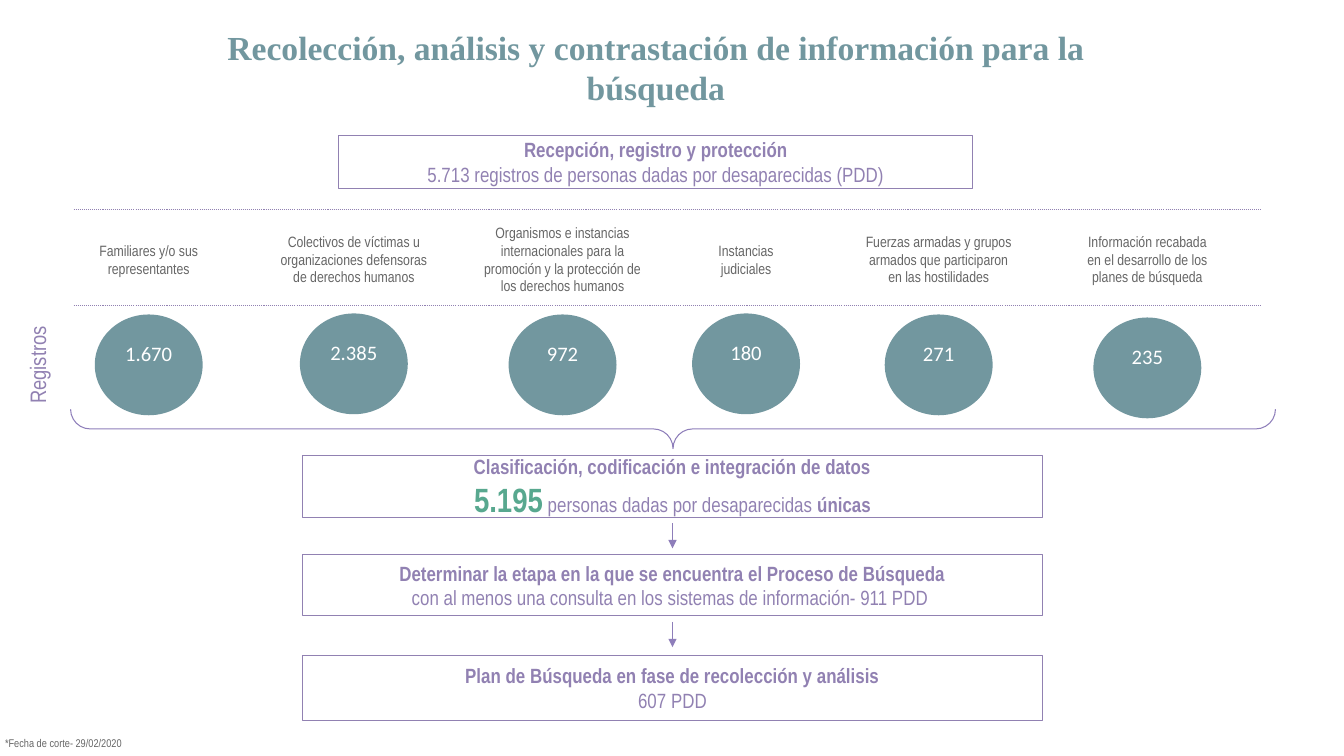
from lxml.etree import SubElement
from pptx import Presentation
from pptx.dml.color import RGBColor
from pptx.enum.dml import MSO_LINE
from pptx.enum.shapes import MSO_CONNECTOR, MSO_SHAPE
from pptx.enum.text import MSO_ANCHOR, PP_ALIGN
from pptx.oxml.ns import qn
from pptx.util import Inches, Pt

TEAL = RGBColor(0x72, 0x97, 0x9F)
PURPLE = RGBColor(0x91, 0x81, 0xB2)
VIOLET = RGBColor(0x8E, 0x7E, 0xBA)
GREEN = RGBColor(0x58, 0xA8, 0x8F)
GRAY = RGBColor(0x66, 0x66, 0x66)
WHITE = RGBColor(0xFF, 0xFF, 0xFF)
NARROW = "Arial Narrow"
STEP_SIZE = 14.7

SOURCES = [
    ("Familiares y/o sus representantes", "1.670", 1.475, 1.45, 3.12),
    ("Colectivos de víctimas u organizaciones defensoras de derechos humanos",
     "2.385", 3.51, 1.88, 3.11),
    ("Organismos e instancias internacionales para la promoción y la protección "
     "de los derechos humanos", "972", 5.58, 1.97, 3.12),
    ("Instancias judiciales", "180", 7.4, 1.24, 3.11),
    ("Fuerzas armadas y grupos armados que participaron en las hostilidades",
     "271", 9.31, 1.78, 3.12),
    ("Información recabada en el desarrollo de los planes de búsqueda",
     "235", 11.38, 1.52, 3.15),
]

STEPS = [
    ((3.36, 1.34, 6.29, 0.53), "Recepción, registro y protección",
     [("5.713 registros de personas dadas por desaparecidas (PDD)", STEP_SIZE, PURPLE, False)]),
    ((3, 4.52, 7.34, 0.61), "Clasificación, codificación e integración de datos",
     [("5.195", 24, GREEN, True), (" ", STEP_SIZE, PURPLE, True),
      ("personas dadas por desaparecidas", STEP_SIZE, PURPLE, False),
      (" únicas", STEP_SIZE, PURPLE, True)]),
    ((3, 5.5, 7.34, 0.61), "Determinar la etapa en la que se encuentra el Proceso de Búsqueda",
     [("con al menos una consulta en los sistemas de información- 911 PDD ",
       STEP_SIZE, PURPLE, False)]),
    ((3, 6.5, 7.34, 0.65), "Plan de Búsqueda en fase de recolección y análisis",
     [("607 PDD", STEP_SIZE, PURPLE, False)]),
]


def style_font(font, size, color, name=NARROW, bold=False):
    """Apply size, colour, typeface and weight to a font."""
    font.size, font.name, font.bold = Pt(size), name, bold
    font.color.rgb = color


def set_frame(shape, inset=0.07, bottom=None, anchor=MSO_ANCHOR.MIDDLE):
    """Wrap the text of a shape and set its margins and anchor."""
    frame = shape.text_frame
    frame.word_wrap = True
    frame.vertical_anchor = anchor
    frame.margin_left = frame.margin_right = Inches(0.13)
    frame.margin_top = Inches(inset)
    frame.margin_bottom = Inches(inset if bottom is None else bottom)
    return frame


def add_outline(slide, kind, box, fill=None, line=None):
    """Add a preset shape with an optional fill and thin outline."""
    shape = slide.shapes.add_shape(kind, *map(Inches, box))
    shape.shadow.inherit = False
    if fill is None:
        shape.fill.background()
    else:
        shape.fill.solid()
        shape.fill.fore_color.rgb = fill
    if line is None:
        shape.line.fill.background()
    else:
        shape.line.color.rgb = line
        shape.line.width = Pt(0.75)
    return shape


def add_rule(slide, start, end, color, dotted=False, arrow=False):
    """Draw a thin line, dotted or ending in an arrowhead."""
    rule = slide.shapes.add_connector(MSO_CONNECTOR.STRAIGHT, *map(Inches, start + end))
    rule.line.color.rgb = color
    rule.line.width = Pt(0.75)
    if dotted:
        rule.line.dash_style = MSO_LINE.ROUND_DOT
    if arrow:
        SubElement(rule.line._get_or_add_ln(), qn("a:tailEnd"), type="triangle")
    SubElement(rule._element.spPr, qn("a:effectLst"))


def add_label(slide, box, text, size, color, align=PP_ALIGN.LEFT, **frame_options):
    """Add a one-paragraph text box."""
    label = slide.shapes.add_textbox(*map(Inches, box))
    paragraph = set_frame(label, **frame_options).paragraphs[0]
    paragraph.text = text
    paragraph.alignment = align
    style_font(paragraph.runs[0].font, size, color)
    return label


def add_title(slide, box):
    """Add the slide heading."""
    heading = add_outline(slide, MSO_SHAPE.RECTANGLE, box, fill=WHITE)
    paragraph = set_frame(heading).paragraphs[0]
    paragraph.text = "Recolección, análisis y contrastación de información para la búsqueda"
    paragraph.alignment = PP_ALIGN.CENTER
    paragraph.space_before = paragraph.space_after = Pt(16)
    style_font(paragraph.runs[0].font, 24, TEAL, "Times New Roman", True)


def add_step(slide, box, heading, detail):
    """Add an outlined step with a bold heading above its detail."""
    step = add_outline(slide, MSO_SHAPE.RECTANGLE, box, line=PURPLE)
    frame = set_frame(step, inset=0.13)
    for runs in ([(heading, STEP_SIZE, PURPLE, True)], detail):
        paragraph = frame.add_paragraph() if frame.text else frame.paragraphs[0]
        paragraph.alignment = PP_ALIGN.CENTER
        for text, size, color, bold in runs:
            run = paragraph.add_run()
            run.text = text
            style_font(run.font, size, color, bold=bold)


def add_source(slide, name, count, center, width, circle_top):
    """Add one source of records: its name above a circled count."""
    add_label(slide, (center - width / 2, 2.16, width, 0.82), name, 10.7, GRAY, PP_ALIGN.CENTER)
    circle = add_outline(slide, MSO_SHAPE.OVAL, (center - 0.535, circle_top, 1.07, 1), fill=TEAL)
    paragraph = set_frame(circle, bottom=0.3).paragraphs[0]
    paragraph.text = count
    paragraph.alignment = PP_ALIGN.CENTER
    style_font(paragraph.runs[0].font, STEP_SIZE, WHITE, "Calibri")


def add_records(slide, left, top, width):
    """Add the band of sources with its rules, side label and brace."""
    for offset in (0, 0.95):
        add_rule(slide, (left, top + offset), (left + width, top + offset), PURPLE, dotted=True)
    for source in SOURCES:
        add_source(slide, *source)
    side = add_label(slide, (left - 0.89, top + 1.33, 1.05, 0.4), "Registros", 16, PURPLE,
                     anchor=MSO_ANCHOR.TOP)
    side.rotation = 270
    brace = add_outline(slide, MSO_SHAPE.LEFT_BRACE, (6.48, -1.72, 0.39, 11.95), line=VIOLET)
    brace.adjustments[0] = brace.adjustments[1] = 0.5
    brace.rotation = 270


def main():
    """Build and save the slide."""
    deck = Presentation()
    deck.slide_width, deck.slide_height = Inches(13.33), Inches(7.5)
    slide = deck.slides.add_slide(deck.slide_layouts[6])
    add_title(slide, (1.43, 0.23, 10.15, 0.87))
    add_records(slide, 0.73, 2.08, 11.79)
    for step in STEPS:
        add_step(slide, *step)
    for arrow_top in (5.19, 6.17):
        add_rule(slide, (6.67, arrow_top), (6.67, arrow_top + 0.25), VIOLET, arrow=True)
    add_label(slide, (-0.08, 7.23, 1.81, 0.28), "*Fecha de corte- 29/02/2020", 8, GRAY, inset=0.13)
    deck.save("out.pptx")


if __name__ == "__main__":
    main()
